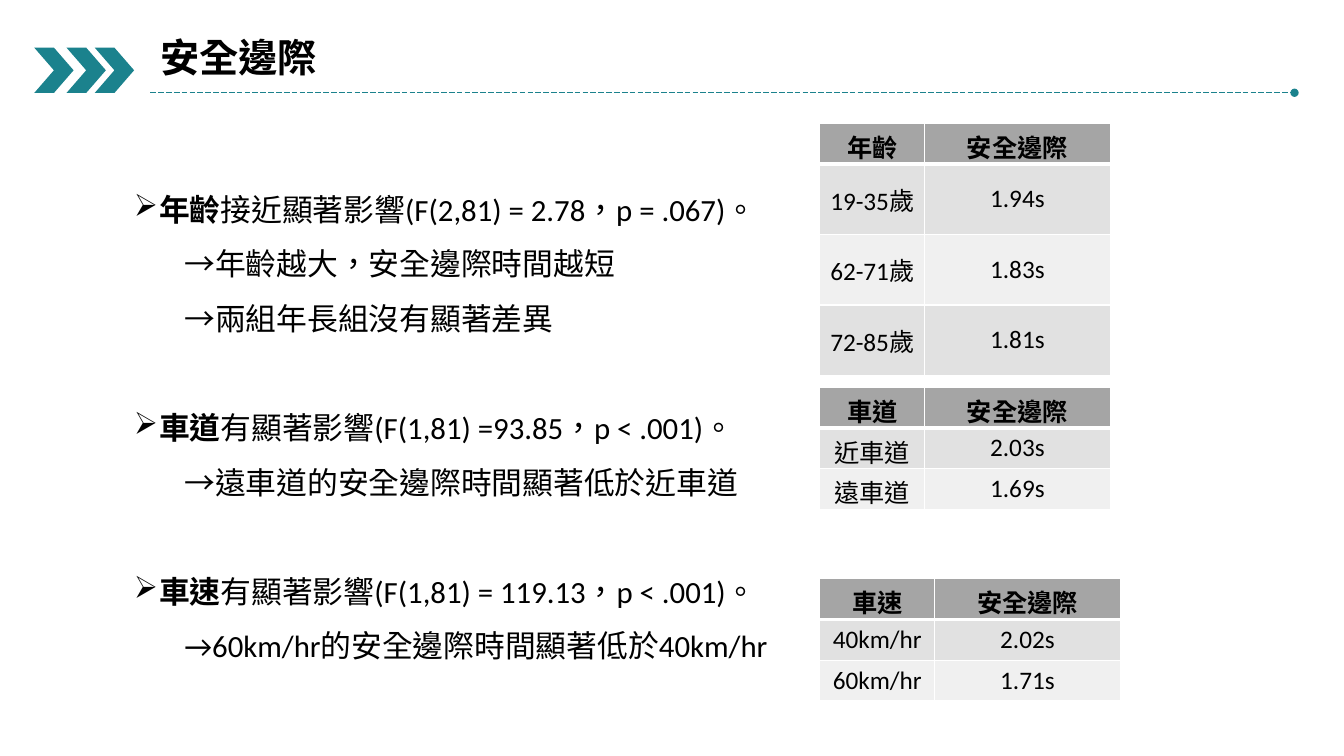
from lxml import etree
from pptx import Presentation
from pptx import util as u
from pptx.dml.color import RGBColor
from pptx.enum import dml, lang, shapes, text
from pptx.oxml import ns

TEAL, BLACK, WHITE = "1B828D", "000000", "FFFFFF"
HEADER, BANDS = "A5A5A5", ("E1E1E1", "F0F0F0")
TITLE_FONT, BODY_FONT = "Noto Sans CJK SC", "Calibri"

FINDINGS = [
    ("年齡", "接近顯著影響(F(2,81) = 2.78，p = .067)。",
     ["→年齡越大，安全邊際時間越短", "→兩組年長組沒有顯著差異"]),
    ("車道", "有顯著影響(F(1,81) =93.85，p < .001)。",
     ["→遠車道的安全邊際時間顯著低於近車道"]),
    ("車速", "有顯著影響(F(1,81) = 119.13，p < .001)。",
     ["→60km/hr的安全邊際時間顯著低於40km/hr"]),
]
TABLES = [
    (16.27, 7.8, [("年齡", "安全邊際"), ("19-35歲", "1.94s"), ("62-71歲", "1.83s"), ("72-85歲", "1.81s")]),
    (51.2, 7.8, [("車道", "安全邊際"), ("近車道", "2.03s"), ("遠車道", "1.69s")]),
    (76.53, 8.55, [("車速", "安全邊際"), ("40km/hr", "2.02s"), ("60km/hr", "1.71s")]),
]


def color(value):
    return RGBColor.from_string(value)


def add_xml(parent, tag, **attributes):
    return etree.SubElement(parent, ns.qn(tag), attributes)


class SlideBuilder:
    """Draws styled elements on one slide, with lengths in percent of its size."""

    def __init__(self):
        self.deck = Presentation()
        self.deck.slide_width, self.deck.slide_height = u.Inches(13.33), u.Inches(7.5)
        self.page = self.deck.slides.add_slide(self.deck.slide_layouts[5])

    def across(self, share):
        return int(self.deck.slide_width * share / 100)

    def down(self, share):
        return int(self.deck.slide_height * share / 100)

    def area(self, left, top, width, height):
        return self.across(left), self.down(top), self.across(width), self.down(height)

    def span(self, para, words, size, bold=False, font=BODY_FONT):
        span = para.add_run()
        span.text = words
        span.font.size, span.font.bold, span.font.name = u.Pt(size), bold, font
        span.font.color.rgb = color(BLACK)
        span.font.language_id = lang.MSO_LANGUAGE_ID.TRADITIONAL_CHINESE
        return span

    def title(self, words, *place):
        box = self.page.shapes.title
        box.left, box.top, box.width, box.height = self.area(*place)
        frame = box.text_frame
        frame.word_wrap = False
        frame.auto_size = text.MSO_AUTO_SIZE.SHAPE_TO_FIT_TEXT
        frame.vertical_anchor = text.MSO_ANCHOR.TOP
        para = frame.paragraphs[0]
        para.alignment = text.PP_ALIGN.LEFT
        span = self.span(para, words, 28, True, TITLE_FONT)
        add_xml(span.font._element, "a:ea", typeface=TITLE_FONT)

    def chevron(self, *place):
        mark = self.page.shapes.add_shape(shapes.MSO_SHAPE.CHEVRON, *self.area(*place))
        mark.shadow.inherit = False
        mark.fill.solid()
        mark.fill.fore_color.rgb = color(TEAL)
        mark.line.fill.background()

    def rule(self, start, end, top):
        rule = self.page.shapes.add_connector(
            shapes.MSO_CONNECTOR.STRAIGHT,
            self.across(start), self.down(top), self.across(end), self.down(top))
        rule.line.color.rgb = color(TEAL)
        rule.line.width = u.Pt(0.5)
        rule.line.dash_style = dml.MSO_LINE.LONG_DASH
        add_xml(rule.line._get_or_add_ln(), "a:tailEnd", type="oval")
        add_xml(rule._element.spPr, "a:effectLst")

    def paragraph(self, para, margin, indent, before):
        para.alignment = text.PP_ALIGN.JUSTIFY
        para.line_spacing = 1.25
        para.space_before, para.space_after = u.Pt(before), u.Pt(3)
        properties = para._p.get_or_add_pPr()
        properties.set("marL", str(u.Inches(margin)))
        properties.set("indent", str(u.Inches(indent)))
        return properties

    def findings(self, groups, *place):
        frame = self.page.shapes.add_textbox(*self.area(*place)).text_frame
        frame.word_wrap = True
        for index, (factor, result, details) in enumerate(groups):
            para = frame.add_paragraph() if index else frame.paragraphs[0]
            properties = self.paragraph(para, 0.25, -0.25, 42 if index else 3)
            add_xml(properties, "a:buChar", char="➢")
            self.span(para, factor, 22, True)
            self.span(para, result, 22)
            for detail in details:
                para = frame.add_paragraph()
                self.paragraph(para, 0.5, 0, 3)
                self.span(para, detail, 22)

    def cell(self, cell, words, fill, bold, edges):
        properties = cell._tc.get_or_add_tcPr()
        for side, width in edges.items():
            edge = add_xml(properties, f"a:ln{side}", w=str(u.Pt(width)))
            add_xml(add_xml(edge, "a:solidFill"), "a:srgbClr", val=WHITE)
        cell.fill.solid()
        cell.fill.fore_color.rgb = color(fill)
        cell.vertical_anchor = text.MSO_ANCHOR.MIDDLE
        para = cell.text_frame.paragraphs[0]
        para.alignment = text.PP_ALIGN.CENTER
        self.span(para, words, 18, bold)

    def table(self, left, top, widths, row_height, rows):
        table = self.page.shapes.add_table(
            len(rows), len(widths),
            *self.area(left, top, sum(widths), row_height * len(rows))).table
        for column, width in zip(table.columns, widths):
            column.width = self.across(width)
        for i, row in enumerate(rows):
            fill = BANDS[(i - 1) % 2] if i else HEADER
            edges = {"L": 1, "R": 1, "T": 3 if i == 1 else 1, "B": 1 if i else 3}
            for j, words in enumerate(row):
                self.cell(table.cell(i, j), words, fill, i == 0, edges)


def main():
    slide = SlideBuilder()
    slide.title("安全邊際", 11.18, 3.73, 13.28, 7.6)
    for left in (2.55, 4.95, 7.05):
        slide.chevron(left, 6.3, 2.93, 6)
    slide.rule(11.18, 96.32, 12.27)
    slide.findings(FINDINGS, 9.23, 23.33, 59.64, 65.33)
    for top, label_width, rows in TABLES:
        slide.table(61, top, (label_width, 13.8), 5.4, rows)
    slide.deck.save("out.pptx")


if __name__ == "__main__":
    main()
